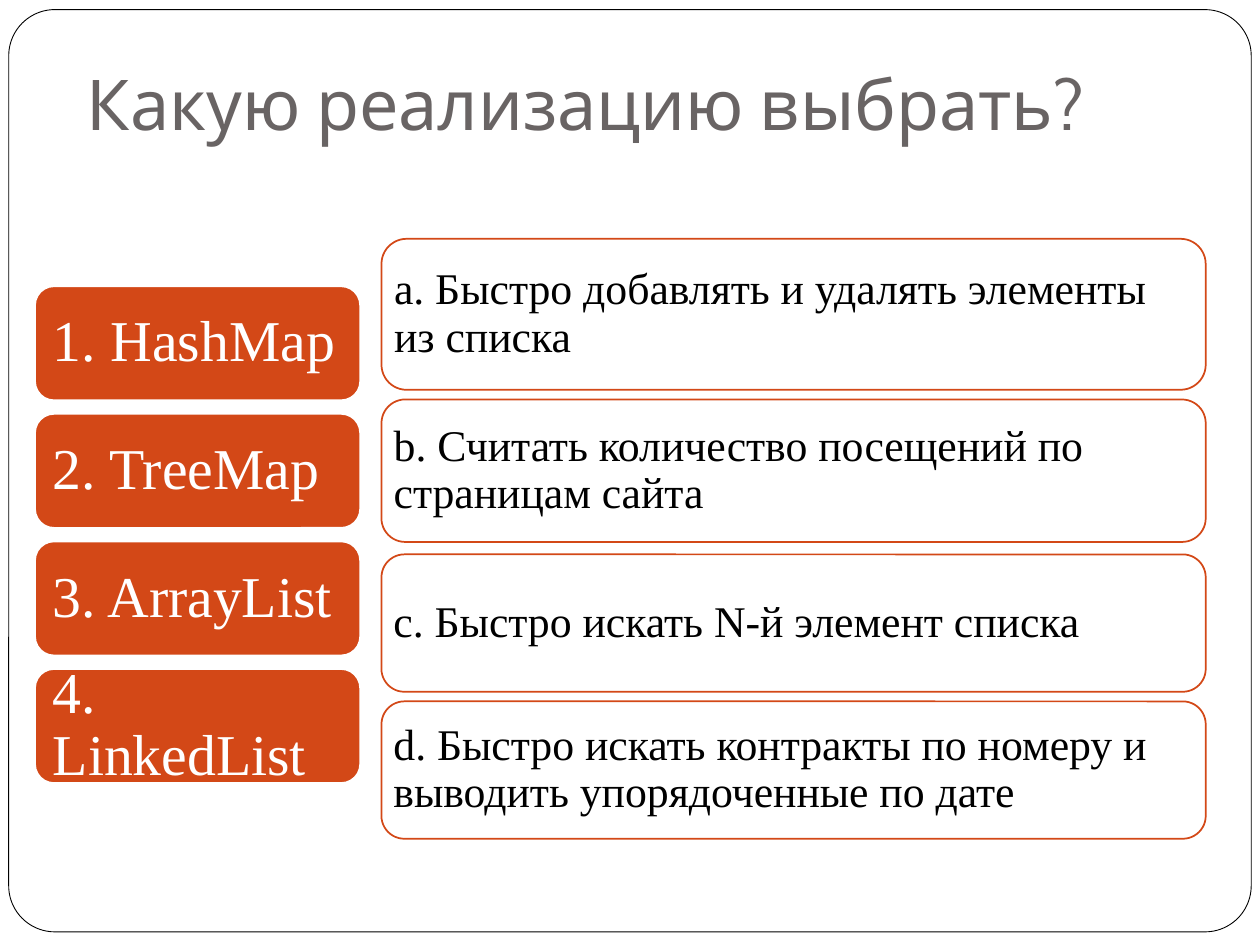
"""Build a slide that matches Java collections with tasks."""
from pptx import Presentation
from pptx.dml.color import RGBColor
from pptx.enum.shapes import MSO_SHAPE
from pptx.enum.text import MSO_ANCHOR, PP_ALIGN
from pptx.util import Pt

ROUND = MSO_SHAPE.ROUNDED_RECTANGLE
MIDDLE, BOTTOM = MSO_ANCHOR.MIDDLE, MSO_ANCHOR.BOTTOM
LEFT = PP_ALIGN.LEFT
WHITE = RGBColor(0xFF, 0xFF, 0xFF)
BLACK = RGBColor(0, 0, 0)
ORANGE = RGBColor(0xD3, 0x48, 0x17)
GRAY = RGBColor(0x69, 0x64, 0x64)

TITLE = "Какую реализацию выбрать?"
TYPES = ["1. HashMap", "2. TreeMap", "3. ArrayList", "4. LinkedList"]
TASKS = [
    ("a. Быстро добавлять и удалять элементы из списка", 136.5, 86.3),
    ("b. Считать количество посещений по страницам сайта", 228.3, 81.4),
    ("c. Быстро искать N-й элемент списка", 316.8, 78.5),
    ("d. Быстро искать контракты по номеру и выводить упорядоченные по дате",
     400.8, 78.5),
]
TOP, STEP, TALL = 163.6, 72.9, 65.2


def add_box(shapes, box, fill, line, width=1):
    shape = shapes.add_shape(ROUND, *map(Pt, box))
    shape.shadow.inherit = False
    shape.fill.solid()
    shape.fill.fore_color.rgb = fill
    shape.line.color.rgb = line
    shape.line.width = Pt(width)
    return shape


def set_text(shape, text, font, size, color, anchor, pads):
    frame = shape.text_frame
    frame.text = text
    frame.word_wrap = True
    frame.vertical_anchor = anchor
    (frame.margin_left, frame.margin_top,
     frame.margin_right, frame.margin_bottom) = map(Pt, pads)
    para = frame.paragraphs[0]
    para.alignment = LEFT
    para.line_spacing = 0.9 if anchor == MIDDLE else 1.0
    face = para.runs[0].font
    face.name, face.size = font, Pt(size)
    face.color.rgb = color


def main():
    deck = Presentation()
    deck.slide_width, deck.slide_height = Pt(720), Pt(540)
    shapes = deck.slides.add_slide(deck.slide_layouts[5]).shapes

    frame = add_box(shapes, (5, 5.5, 710, 527), WHITE, BLACK, 0.5)
    frame.adjustments[0] = 0.05
    title = shapes.title
    frame._element.addnext(title._element)
    title.left, title.top, title.width, title.height = map(
        Pt, (42.5, 0, 612, 90))
    set_text(title, TITLE, "Cabin", 40, GRAY, BOTTOM, (7.2, 3.6, 7.2, 7.2))

    for i, name in enumerate(TYPES):
        box = add_box(shapes, (20, TOP + i * STEP, 185.8, TALL), ORANGE, WHITE)
        set_text(box, name, "Times New Roman", 33, WHITE, MIDDLE, [7] * 4)

    for task, top, tall in TASKS:
        box = add_box(shapes, (218, top, 471, tall), WHITE, ORANGE)
        set_text(box, task, "Times New Roman", 25, BLACK, MIDDLE, [3] * 4)

    deck.save("out.pptx")


if __name__ == "__main__":
    main()
